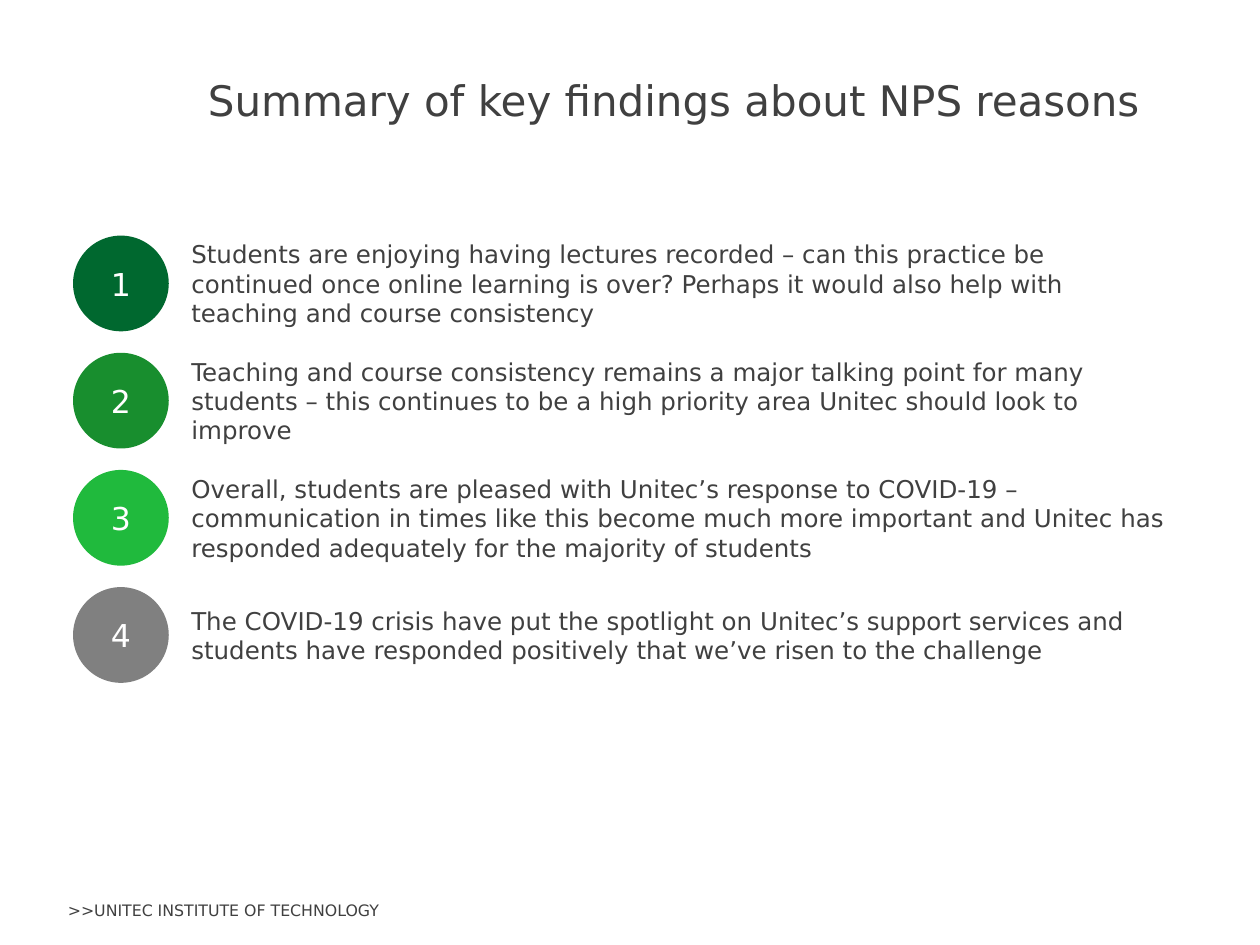
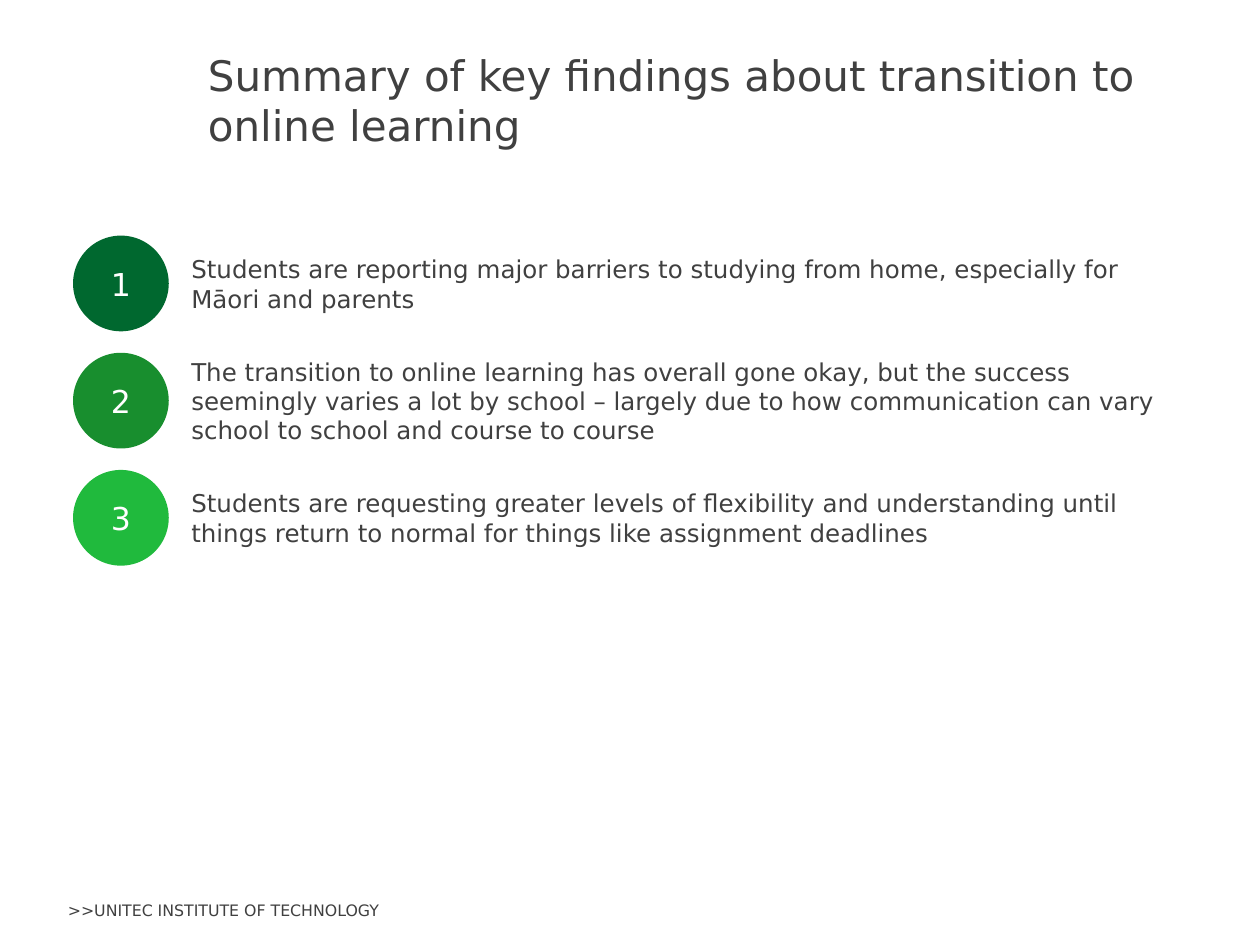
from pptx import Presentation
from pptx.dml.color import RGBColor
from pptx.enum.shapes import MSO_SHAPE
from pptx.enum.text import MSO_ANCHOR, MSO_AUTO_SIZE, PP_ALIGN
from pptx.util import Inches, Pt

OVAL = MSO_SHAPE.OVAL
MIDDLE, TOP = MSO_ANCHOR.MIDDLE, MSO_ANCHOR.TOP
LEFT, CENTER = PP_ALIGN.LEFT, PP_ALIGN.CENTER
FIXED = MSO_AUTO_SIZE.NONE

FONT = "DejaVu Sans"
COLORS = {
    "text": "404040",
    "number": "FFFFFF",
    "badges": ["00682F", "188E2E", "20BA3D", "808080"],
}
FOOTER = ">>UNITEC INSTITUTE OF TECHNOLOGY"

BADGE_LEFT, BADGE_SIZE = 0.58, 0.76
TEXT_LEFT, TEXT_WIDTH, TEXT_HEIGHT = 1.42, 8, 0.81
FIRST_ROW, ROW_STEP = 2.25, 0.93

SLIDES = [
    ("Summary of key findings about NPS reasons", [
        "Students are enjoying having lectures recorded – can this practice be continued "
        "once online learning is over? Perhaps it would also help with teaching and course "
        "consistency",
        "Teaching and course consistency remains a major talking point for many students – "
        "this continues to be a high priority area Unitec should look to improve",
        "Overall, students are pleased with Unitec’s response to COVID-19 – communication in "
        "times like this become much more important and Unitec has responded adequately for "
        "the majority of students",
        "The COVID-19 crisis have put the spotlight on Unitec’s support services and students "
        "have responded positively that we’ve risen to the challenge",
    ]),
    ("Summary of key findings about transition to online learning", [
        "Students are reporting major barriers to studying from home, especially for Māori "
        "and parents",
        "The transition to online learning has overall gone okay, but the success seemingly "
        "varies a lot by school – largely due to how communication can vary school to school "
        "and course to course",
        "Students are requesting greater levels of flexibility and understanding until things "
        "return to normal for things like assignment deadlines",
    ]),
]


def write(box, text, size, color=COLORS["text"], align=LEFT, anchor=MIDDLE):
    frame = box.text_frame
    frame.word_wrap = True
    frame.auto_size = FIXED
    frame.vertical_anchor = anchor
    para = frame.paragraphs[0]
    para.alignment = align
    span = para.add_run()
    span.text = text
    span.font.name = FONT
    span.font.size = Pt(size)
    span.font.color.rgb = RGBColor.from_string(color)


def place(left, top, width, height):
    return [Inches(length) for length in (left, top, width, height)]


deck = Presentation()
deck.slide_width, deck.slide_height = Inches(10), Inches(7.5)
title_only = deck.slide_layouts[5]

for heading, findings in SLIDES:
    page = deck.slides.add_slide(title_only)

    title = page.shapes.title
    title.left, title.top, title.width, title.height = place(1.55, 0.51, 7.87, 0.56)
    write(title, heading, 24)

    for row, finding in enumerate(findings):
        middle = FIRST_ROW + row * ROW_STEP
        badge = page.shapes.add_shape(
            OVAL, *place(BADGE_LEFT, middle - BADGE_SIZE / 2, BADGE_SIZE, BADGE_SIZE))
        badge.shadow.inherit = False
        badge.fill.solid()
        badge.fill.fore_color.rgb = RGBColor.from_string(COLORS["badges"][row])
        badge.line.fill.background()
        write(badge, str(row + 1), 18, COLORS["number"], CENTER)

        box = page.shapes.add_textbox(
            *place(TEXT_LEFT, middle - TEXT_HEIGHT / 2, TEXT_WIDTH, TEXT_HEIGHT))
        write(box, finding, 14)

    footer = page.shapes.add_textbox(*place(0.44, 7.1, 4.07, 0.25))
    write(footer, FOOTER, 9, anchor=TOP)

deck.save("out.pptx")
